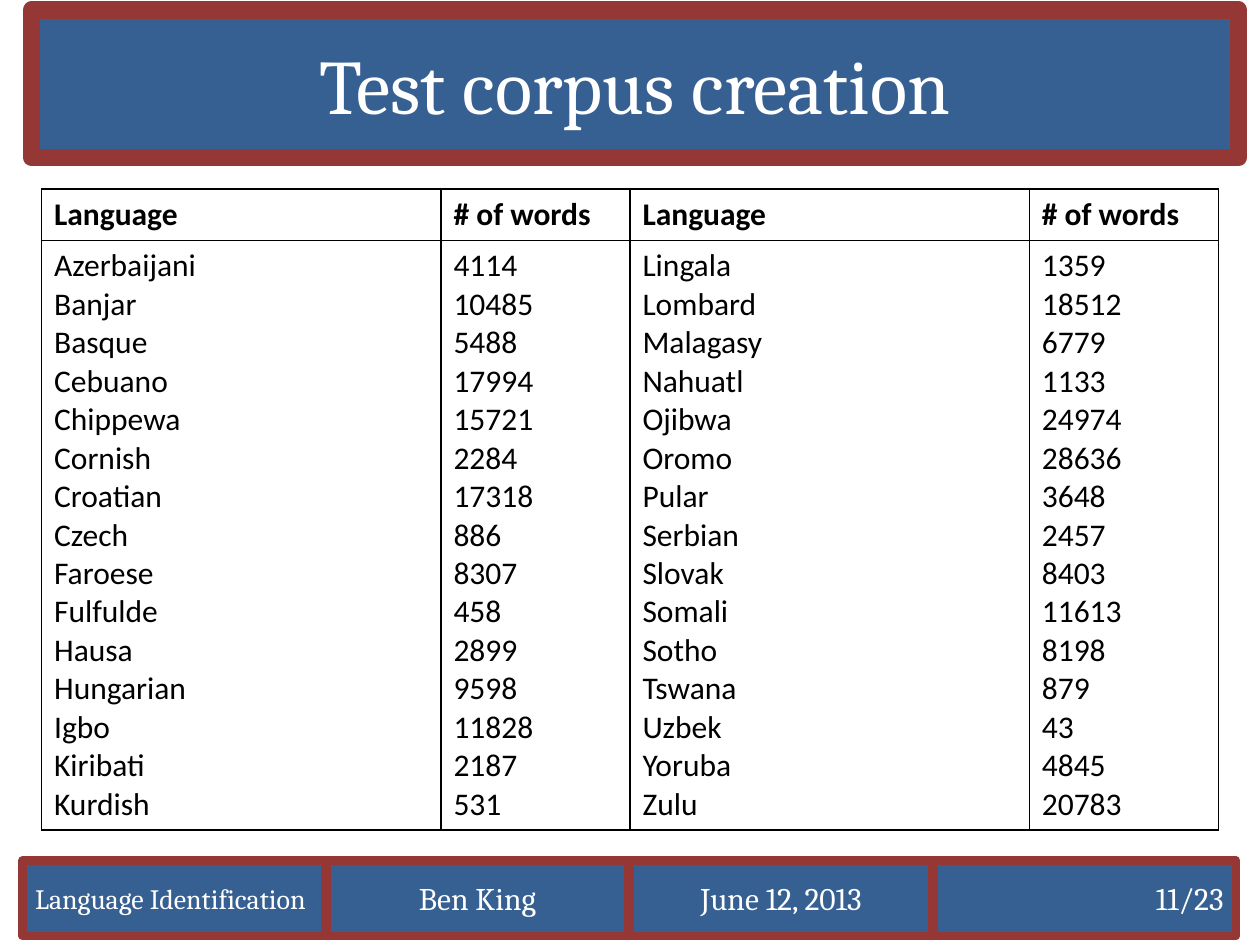
"""Build the slide on test corpus creation, with its table of word counts."""
from lxml import etree
from pptx import Presentation
from pptx.dml.color import RGBColor
from pptx.enum.shapes import MSO_SHAPE
from pptx.enum.text import MSO_ANCHOR, PP_ALIGN
from pptx.oxml.ns import qn
from pptx.util import Inches, Pt

LEFT, CENTER, RIGHT = PP_ALIGN.LEFT, PP_ALIGN.CENTER, PP_ALIGN.RIGHT
MIDDLE = MSO_ANCHOR.MIDDLE
RECTANGLE = MSO_SHAPE.RECTANGLE
BLUE = RGBColor(0x37, 0x60, 0x92)
RED = RGBColor(0x95, 0x37, 0x35)
WHITE = RGBColor(0xFF, 0xFF, 0xFF)
BLACK = RGBColor(0x00, 0x00, 0x00)

TITLE = "Test corpus creation"
FOOTER = [
    ("Language Identification", LEFT, 16),
    ("Ben King", CENTER, 18),
    ("June 12, 2013", CENTER, 18),
    ("11/23", RIGHT, 18),
]
HEADINGS = ["Language", "# of words"]
WORD_COUNTS = [
    ("Azerbaijani", 4114), ("Banjar", 10485), ("Basque", 5488),
    ("Cebuano", 17994), ("Chippewa", 15721), ("Cornish", 2284),
    ("Croatian", 17318), ("Czech", 886), ("Faroese", 8307),
    ("Fulfulde", 458), ("Hausa", 2899), ("Hungarian", 9598),
    ("Igbo", 11828), ("Kiribati", 2187), ("Kurdish", 531),
    ("Lingala", 1359), ("Lombard", 18512), ("Malagasy", 6779),
    ("Nahuatl", 1133), ("Ojibwa", 24974), ("Oromo", 28636),
    ("Pular", 3648), ("Serbian", 2457), ("Slovak", 8403),
    ("Somali", 11613), ("Sotho", 8198), ("Tswana", 879),
    ("Uzbek", 43), ("Yoruba", 4845), ("Zulu", 20783),
]
COLUMN_WIDTHS = [3.17, 1.5] * 2
ROW_HEIGHTS = [0.41, 4.6]
FOOTER_LEFT, FOOTER_STEP = 0.18, 2.41


def write(frame, lines, align=LEFT, **font_format):
    """Fill a text frame with one paragraph for each line."""
    frame.text = "\n".join(lines)
    for para in frame.paragraphs:
        para.alignment = align
        for span in para.runs:
            color = font_format["color"]
            span.font.color.rgb = color
            for name, value in font_format.items():
                if name != "color":
                    setattr(span.font, name, value)


def format_panel(box, text, align, size, border):
    """Give a box its blue fill, red border and white text."""
    box.fill.solid()
    box.fill.fore_color.rgb = BLUE
    box.line.color.rgb = RED
    box.line.width = Pt(border)
    box.text_frame.word_wrap = True
    box.text_frame.vertical_anchor = MIDDLE
    write(box.text_frame, [text], align, name="Cambria", size=Pt(size), color=WHITE)


def add_borders(cell):
    """Draw a thin black line on each side of a table cell."""
    properties = cell._tc.get_or_add_tcPr()
    for position, side in enumerate(("a:lnL", "a:lnR", "a:lnT", "a:lnB")):
        line = etree.Element(qn(side), w=str(Pt(1)))
        fill = etree.SubElement(line, qn("a:solidFill"))
        etree.SubElement(fill, qn("a:srgbClr"), val=str(BLACK))
        properties.insert(position, line)


def add_word_table(page):
    """Add the table, with half of the languages in each pair of columns."""
    half = len(WORD_COUNTS) // 2
    columns = []
    for part in (WORD_COUNTS[:half], WORD_COUNTS[half:]):
        columns += [[str(value) for value in column] for column in zip(*part)]
    table = page.shapes.add_table(
        len(ROW_HEIGHTS), len(columns), Inches(0.33), Inches(1.5),
        Inches(sum(COLUMN_WIDTHS)), Inches(sum(ROW_HEIGHTS))).table
    for row, height in zip(table.rows, ROW_HEIGHTS):
        row.height = Inches(height)
    for index, (heading, lines) in enumerate(zip(HEADINGS * 2, columns)):
        table.columns[index].width = Inches(COLUMN_WIDTHS[index])
        for row, content in enumerate(([heading], lines)):
            cell = table.cell(row, index)
            cell.fill.background()
            add_borders(cell)
            write(cell.text_frame, content, name="Calibri", size=Pt(18),
                  bold=row == 0, color=BLACK)


def main():
    deck = Presentation()
    deck.slide_width, deck.slide_height = Inches(10), Inches(7.5)
    page = deck.slides.add_slide(deck.slide_layouts[5])

    title = page.shapes.title
    title.left, title.top = Inches(0.25), Inches(0.08)
    title.width, title.height = Inches(9.58), Inches(1.17)
    format_panel(title, TITLE, CENTER, 44, 10)

    for index, (text, align, size) in enumerate(FOOTER):
        box = page.shapes.add_shape(
            RECTANGLE, Inches(FOOTER_LEFT + index * FOOTER_STEP),
            Inches(6.83), Inches(2.4), Inches(0.6))
        box.shadow.inherit = False
        format_panel(box, text, align, size, 5)

    add_word_table(page)
    deck.save("out.pptx")


if __name__ == "__main__":
    main()
